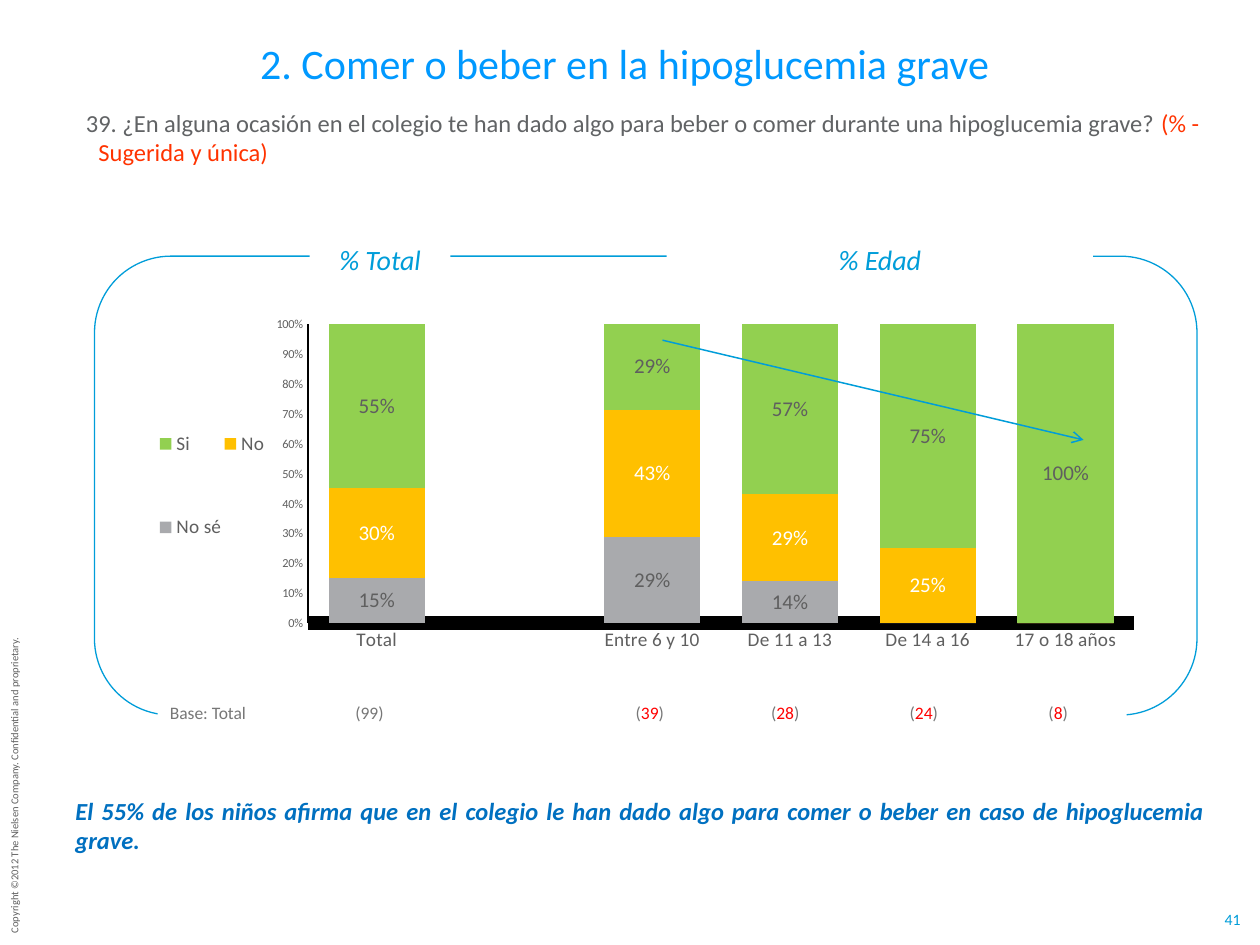
from collections import namedtuple
from dataclasses import dataclass

from lxml import etree
from pptx import Presentation
from pptx.chart.data import CategoryChartData
from pptx.dml.color import RGBColor
from pptx.enum.chart import XL_CHART_TYPE, XL_LEGEND_POSITION, XL_TICK_MARK
from pptx.enum.shapes import MSO_CONNECTOR, MSO_SHAPE
from pptx.enum.text import MSO_ANCHOR, PP_ALIGN
from pptx.oxml import parse_xml
from pptx.oxml.ns import nsdecls, qn
from pptx.util import Inches, Pt

STACKED = XL_CHART_TYPE.COLUMN_STACKED_100
LEGEND_LEFT = XL_LEGEND_POSITION.LEFT
NO_TICK = XL_TICK_MARK.NONE
STRAIGHT = MSO_CONNECTOR.STRAIGHT
RECT, ROUND_RECT = MSO_SHAPE.RECTANGLE, MSO_SHAPE.ROUNDED_RECTANGLE
TOP, MIDDLE = MSO_ANCHOR.TOP, MSO_ANCHOR.MIDDLE
LEFT, CENTER, JUSTIFY = PP_ALIGN.LEFT, PP_ALIGN.CENTER, PP_ALIGN.JUSTIFY

CELL = Inches(1) / 12
Box = namedtuple("Box", "x y w h")


@dataclass(frozen=True)
class Theme:
    """Colours, font and type sizes of the slide."""
    font: str = "Calibri"
    white: str = "FFFFFF"
    black: str = "000000"
    title: str = "0099FF"
    accent: str = "009DD9"
    body: str = "616365"
    chart: str = "5F5F5F"
    base: str = "777777"
    hint: str = "FF3300"
    small_base: str = "FF0000"
    conclusion: str = "0070C0"
    title_pt: int = 24
    heading_pt: int = 16
    body_pt: int = 14
    label_pt: int = 12
    legend_pt: int = 11
    base_pt: int = 10
    number_pt: int = 9
    axis_pt: int = 7
    copyright_pt: int = 6


T = Theme()
CATEGORIES = ["Total", "", "Entre 6 y 10", "De 11 a 13", "De 14 a 16", "17 o 18 años"]
SERIES = [
    ("No sé", [0.15, None, 0.29, 0.14, 0, 0], "A9AAAD", T.chart),
    ("No", [0.3, None, 0.43, 0.29, 0.25, 0], "FFC000", T.white),
    ("Si", [0.55, None, 0.29, 0.57, 0.75, 1], "92D050", T.chart),
]
BASES = [("99", T.base, 19), ("39", T.small_base, 45.7), ("28", T.small_base, 58.6),
         ("24", T.small_base, 71.8), ("8", T.small_base, 84.6)]


def rgb(color):
    """Turn a hex string into a colour."""
    return RGBColor.from_string(color)


def cells(*values):
    """Turn grid cells into whole EMU lengths."""
    return [round(v * CELL) for v in values]


def within(box, x, y, w, h):
    """Return a box offset from the corner of another, in cells."""
    return Box(box.x + x, box.y + y, w, h)


def style(font, size, color, **flags):
    """Set name, size, colour and flags of a font."""
    font.name, font.size = T.font, Pt(size)
    font.color.rgb = rgb(color)
    for name, value in flags.items():
        setattr(font, name, value)


def write(s, runs, size, align=LEFT, anchor=TOP, wrap=True, **flags):
    """Fill a shape with one paragraph of (text, colour) runs."""
    tf = s.text_frame
    tf.word_wrap, tf.vertical_anchor = wrap, anchor
    p = tf.paragraphs[0]
    p.alignment = align
    style(p.font, size, runs[0][1], **flags)
    for text, color in runs:
        r = p.add_run()
        r.text = text
        r.font.color.rgb = rgb(color)
    return p


def add_text(sl, box, runs, size, **options):
    """Add a text box with one paragraph."""
    s = sl.shapes.add_textbox(*cells(*box))
    return s, write(s, runs, size, **options)


def add_block(sl, kind, box, line=None):
    """Add a white shape, outlined when a line colour is given."""
    s = sl.shapes.add_shape(kind, *cells(*box))
    s.shadow.inherit = False
    s.fill.solid()
    s.fill.fore_color.rgb = rgb(T.white)
    if line:
        s.line.color.rgb, s.line.width = rgb(line), Pt(0.75)
    else:
        s.line.fill.background()
    return s


def set_layout(element, x, y, w, h, before, inner=False):
    """Place a plot area or legend by shares of its chart."""
    old = element.find(qn("c:layout"))
    if old is not None:
        element.remove(old)
    target = '<c:layoutTarget val="inner"/>' if inner else ""
    parts = "".join(f'<c:{k} val="{v}"/>' for k, v in
                    [("xMode", "edge"), ("yMode", "edge"), ("x", x), ("y", y), ("w", w), ("h", h)])
    layout = parse_xml(f"<c:layout {nsdecls('c')}><c:manualLayout>{target}{parts}"
                       "</c:manualLayout></c:layout>")
    element.insert(before, layout)


def add_header(sl, box):
    """Place the title and the survey question."""
    s = sl.shapes.title
    s.left, s.top, s.width, s.height = cells(*within(box, 3, 0, 99, 6))
    write(s, [("2. Comer o beber en la hipoglucemia grave", T.title)], T.title_pt,
          align=CENTER, anchor=MIDDLE)
    question = [("39. ¿En alguna ocasión en el colegio te han dado algo para beber o comer "
                 "durante una hipoglucemia grave? ", T.body), ("(% - Sugerida y única)", T.hint)]
    s, p = add_text(sl, within(box, 0, 6.7, 113, 6.6), question, T.body_pt)
    indent = Inches(0.1)
    pPr = p._p.get_or_add_pPr()
    pPr.set("marL", str(indent))
    pPr.set("indent", str(-indent))


def add_answers(sl, box):
    """Add the stacked chart of answers."""
    data = CategoryChartData(number_format="0%")
    data.categories = CATEGORIES
    for name, values, *_ in SERIES:
        data.add_series(name, values)
    chart = sl.shapes.add_chart(STACKED, *cells(*box), data).chart
    chart.has_title = False
    style(chart.font, T.base_pt, T.chart)
    plot = chart.plots[0]
    plot.gap_width, plot.overlap, plot.vary_by_categories = 43, 100, False
    for series, (_, _, fill, ink) in zip(plot.series, SERIES):
        series.format.fill.solid()
        series.format.fill.fore_color.rgb = rgb(fill)
        labels = series.data_labels
        labels.show_value = True
        labels.number_format, labels.number_format_is_linked = "0%;;", False
        style(labels.font, T.label_pt, ink)
    for axis, size, width in ((chart.category_axis, T.legend_pt, 7.75),
                              (chart.value_axis, T.axis_pt, 0.75)):
        axis.major_tick_mark = axis.minor_tick_mark = NO_TICK
        axis.has_major_gridlines = False
        style(axis.tick_labels.font, size, T.chart)
        axis.format.line.color.rgb, axis.format.line.width = rgb(T.black), Pt(width)
    axis = chart.value_axis
    axis.minimum_scale, axis.maximum_scale, axis.major_unit = 0, 1, 0.1
    axis.tick_labels.number_format, axis.tick_labels.number_format_is_linked = "0%", False
    chart.has_legend = True
    legend = chart.legend
    legend.position, legend.include_in_layout = LEGEND_LEFT, False
    style(legend.font, T.legend_pt, T.chart)
    set_layout(legend._element, 0.02, 0.24, 0.11, 0.47, 1)
    set_layout(plot._element.getparent(), 0.17, 0.14, 0.82, 0.62, 0, inner=True)


def add_bases(sl, box):
    """Add the row of sample sizes, centred under the columns."""
    runs = [("Base: Total", T.base)]
    for count, color, _ in BASES:
        runs += [("\t(", T.base), (count, color), (")", T.base)]
    p = write(add_block(sl, RECT, box), runs, T.base_pt)
    tabs = etree.Element(qn("a:tabLst"))
    for *_, stop in BASES:
        etree.SubElement(tabs, qn("a:tab"), pos=str(round(stop * CELL)), algn="ctr")
    p._p.get_or_add_pPr().insert(0, tabs)


def add_trend(sl, box):
    """Draw the trend arrow from corner to corner of its box."""
    x, y, w, h = box
    s = sl.shapes.add_connector(STRAIGHT, *cells(x, y, x + w, y + h))
    s.line.color.rgb, s.line.width = rgb(T.accent), Pt(0.85)
    etree.SubElement(s.line._get_or_add_ln(), qn("a:tailEnd"), type="arrow")
    etree.SubElement(s._element.spPr, qn("a:effectLst"))


def add_panel(sl, box):
    """Place the framed panel with headings, chart, bases and trend."""
    add_block(sl, ROUND_RECT, box, T.accent)
    add_answers(sl, within(box, 4, 0, 96, 46))
    for text, x, w in (("% Total", 20.5, 13.4), ("% Edad", 54.5, 40.6)):
        s = add_block(sl, RECT, within(box, x, -1.9, w, 4.4))
        write(s, [(text, T.accent)], T.heading_pt, align=CENTER, anchor=MIDDLE, italic=True)
    add_bases(sl, within(box, 6, 41.9, 92.3, 3.2))
    add_trend(sl, within(box, 54.1, 8, 40.1, 9.5))


def add_conclusion(sl, box):
    """Add the closing statement."""
    text = ("El 55% de los niños afirma que en el colegio le han dado algo para comer o beber "
            "en caso de hipoglucemia grave.")
    add_text(sl, box, [(text, T.conclusion)], T.body_pt, align=JUSTIFY, bold=True, italic=True)


def add_margins(sl, box):
    """Add the upright copyright line and the page number."""
    s, _ = add_text(sl, within(box, -14.2, 73.3, 31.1, 2.4),
                    [("Copyright ©2012 The Nielsen Company. Confidential and proprietary.",
                      T.chart)], T.copyright_pt, wrap=False)
    s.rotation = 270
    s, _ = add_text(sl, within(box, 116.5, 86.6, 1.8, 1.8), [("41", T.accent)], T.number_pt,
                    align=CENTER, anchor=MIDDLE, wrap=False)
    tf = s.text_frame
    tf.margin_left = tf.margin_right = tf.margin_top = tf.margin_bottom = 0


def main():
    """Build and save the slide."""
    prs = Presentation()
    prs.slide_width, prs.slide_height = cells(120, 90)
    sl = prs.slides.add_slide(prs.slide_layouts[5])
    add_margins(sl, Box(0, 0, 120, 90))
    add_header(sl, Box(7, 3, 113, 13.3))
    add_panel(sl, Box(9, 24.4, 105, 43.7))
    add_conclusion(sl, Box(6, 75.2, 110, 6.8))
    prs.save("out.pptx")


if __name__ == "__main__":
    main()
